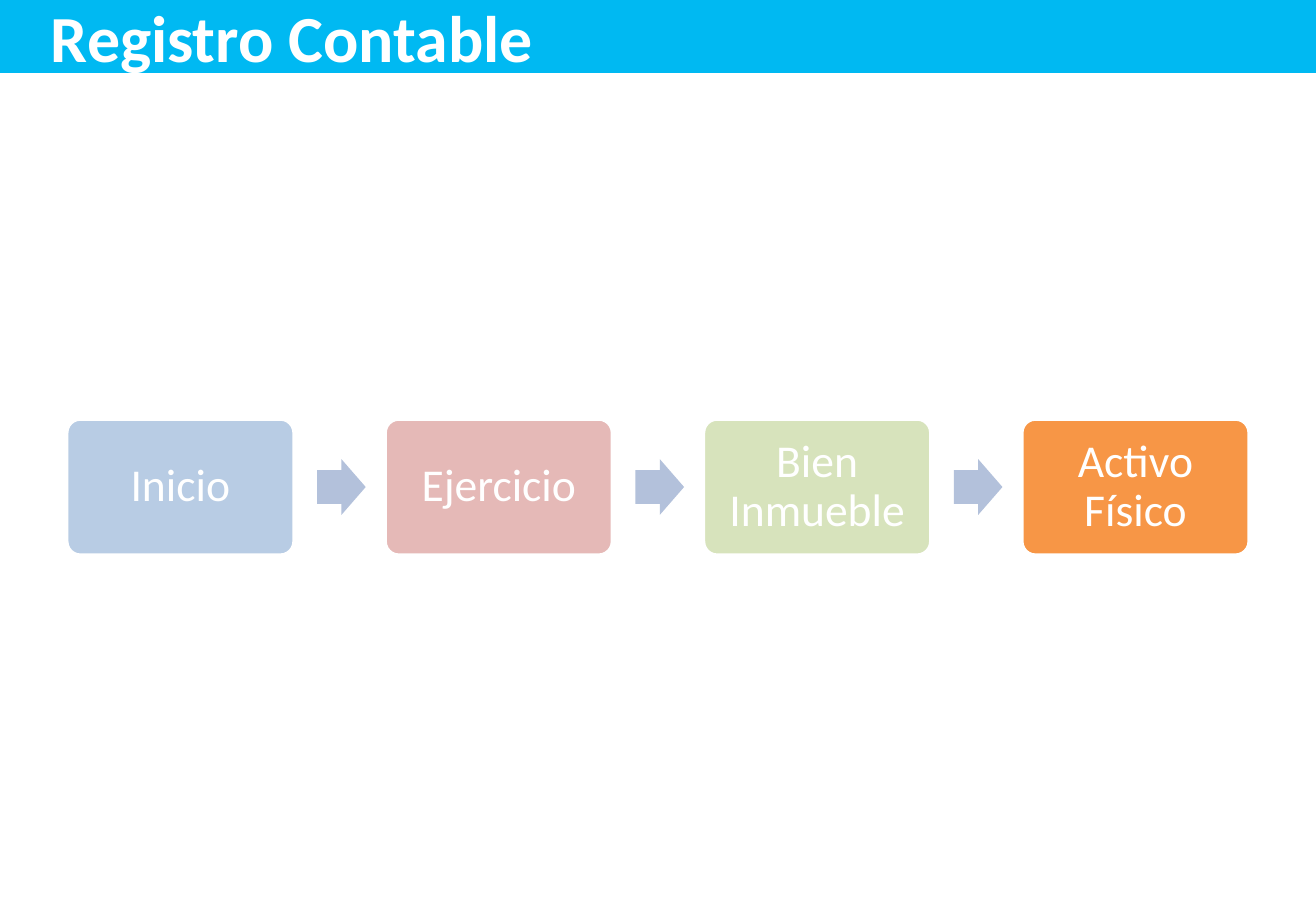
import lxml.etree
import pptx
import pptx.dml.color
import pptx.enum.shapes
import pptx.enum.text
import pptx.oxml.ns
import pptx.util

Inches = pptx.util.Inches
Pt = pptx.util.Pt
RGBColor = pptx.dml.color.RGBColor
SHAPES = pptx.enum.shapes.MSO_SHAPE

WHITE = RGBColor(0xFF, 0xFF, 0xFF)
CYAN = RGBColor(0x00, 0xB9, 0xF2)
BLUE = RGBColor(0x4F, 0x81, 0xBD)
RED = RGBColor(0xC0, 0x50, 0x4D)
GREEN = RGBColor(0x9B, 0xBB, 0x59)
ORANGE = RGBColor(0xF7, 0x96, 0x46)
ARROW_BLUE = RGBColor(0xB3, 0xC1, 0xDB)

STEPS = [
    ("Inicio", BLUE, 40),
    ("Ejercicio", RED, 40),
    ("Bien Inmueble", GREEN, 40),
    ("Activo Físico", ORANGE, 100),
]
STEP_LEFT = 0.55
STEP_PITCH = 2.62
ARROW_OFFSET = 2.06


def add_filled(kind, left, top, width, height, color):
    shape = page.shapes.add_shape(
        kind, Inches(left), Inches(top), Inches(width), Inches(height)
    )
    shape.shadow.inherit = False
    shape.fill.solid()
    shape.fill.fore_color.rgb = color
    shape.line.fill.background()
    return shape


def write_text(shape, text, size, align, side_inset, end_inset):
    frame = shape.text_frame
    frame.word_wrap = True
    frame.vertical_anchor = pptx.enum.text.MSO_ANCHOR.MIDDLE
    frame.margin_left = frame.margin_right = Inches(side_inset)
    frame.margin_top = frame.margin_bottom = Inches(end_inset)
    para = frame.paragraphs[0]
    para.text = text
    para.alignment = align
    para.font.name = "Calibri"
    para.font.size = Pt(size)
    para.font.color.rgb = WHITE
    return para


deck = pptx.Presentation()
deck.slide_width = Inches(10.83)
deck.slide_height = Inches(7.5)
page = deck.slides.add_slide(deck.slide_layouts[6])

title_bar = add_filled(SHAPES.RECTANGLE, 0, 0, 10.83, 0.6, CYAN)
title = write_text(
    title_bar, "Registro Contable", 39, pptx.enum.text.PP_ALIGN.LEFT, 0.42, 0.05
)
title.font.bold = True

for index, (label, color, opacity) in enumerate(STEPS):
    left = STEP_LEFT + index * STEP_PITCH
    box = add_filled(SHAPES.ROUNDED_RECTANGLE, left, 3.45, 1.87, 1.12, color)
    box.adjustments[0] = 0.1
    box.line.color.rgb = WHITE
    box.line.width = Pt(2)
    if opacity < 100:
        fill_color = box.fill._xPr.find(pptx.oxml.ns.qn("a:solidFill"))[0]
        alpha = lxml.etree.SubElement(fill_color, pptx.oxml.ns.qn("a:alpha"))
        alpha.set("val", str(opacity * 1000))
    para = write_text(box, label, 27, pptx.enum.text.PP_ALIGN.CENTER, 0.11, 0.11)
    para.line_spacing = 0.9

    if index < len(STEPS) - 1:
        arrow = add_filled(
            SHAPES.RIGHT_ARROW, left + ARROW_OFFSET, 3.78, 0.4, 0.46, ARROW_BLUE
        )
        arrow.adjustments[0] = 0.6
        arrow.adjustments[1] = 0.5

deck.save("out.pptx")
